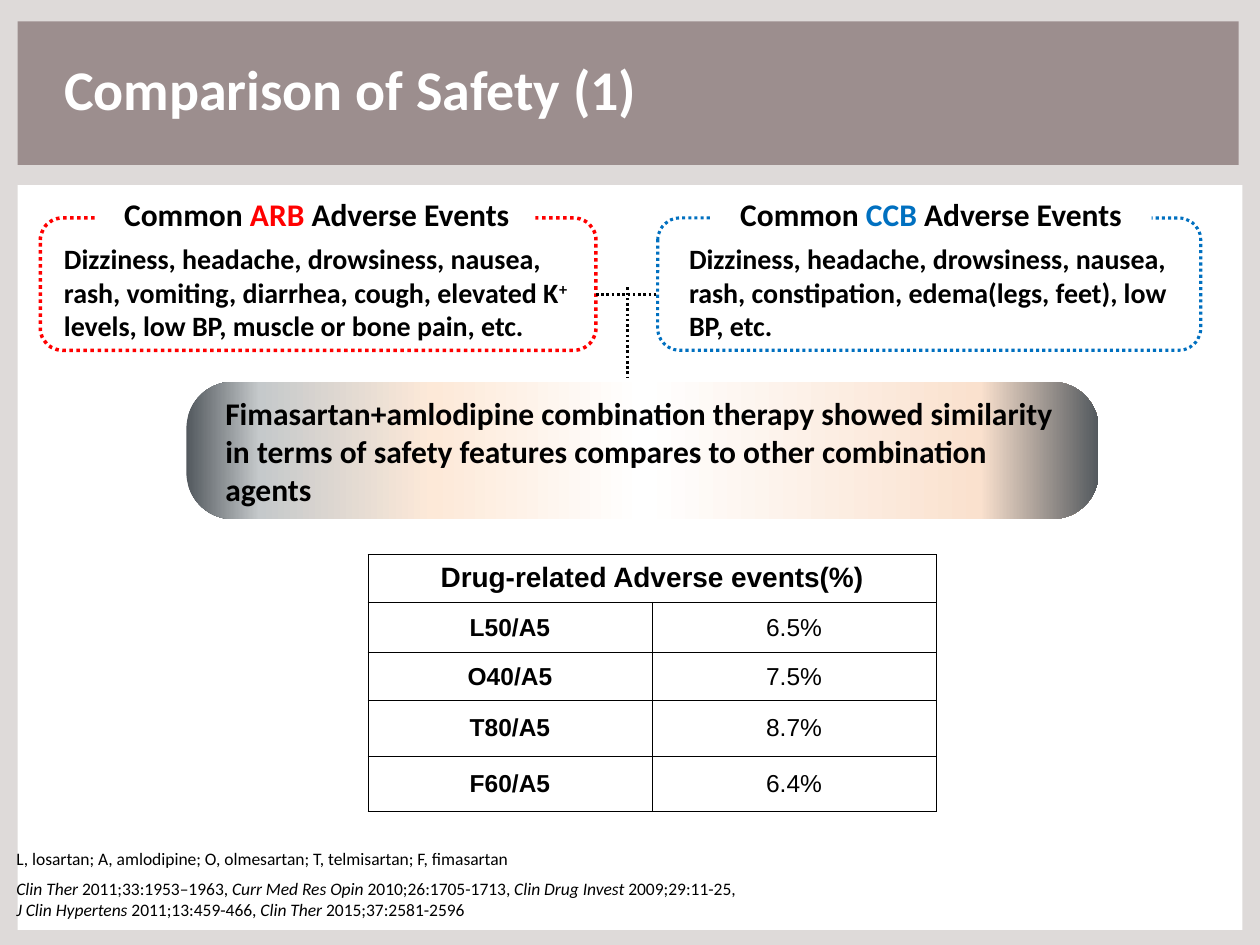
import pptx
import pptx.util
import pptx.dml.color
import pptx.enum.dml
import pptx.enum.shapes
import pptx.enum.text
import pptx.oxml
import pptx.oxml.ns
from lxml import etree

Inches, Pt = pptx.util.Inches, pptx.util.Pt
SHAPE = pptx.enum.shapes.MSO_SHAPE
ALIGN = pptx.enum.text.PP_ALIGN
ANCHOR = pptx.enum.text.MSO_ANCHOR
DOTS = pptx.enum.dml.MSO_LINE.ROUND_DOT
qn = pptx.oxml.ns.qn

BLACK, WHITE, RED, BLUE = "000000", "FFFFFF", "FF0000", "0070C0"
ITALIC = {"italic": True}


def color(hex_code):
    return pptx.dml.color.RGBColor.from_string(hex_code)


class Slide:
    font = {"name": "Calibri", "size": Pt(18), "bold": True}
    insets = {"margin_left": 0.1, "margin_top": 0.05,
              "margin_right": 0.1, "margin_bottom": 0.05}

    def __init__(self, prs, background):
        self.s = prs.slides.add_slide(prs.slide_layouts[6])
        fill = self.s.background.fill
        fill.solid()
        fill.fore_color.rgb = color(background)

    def add_runs(self, tf, paragraphs, align=ALIGN.LEFT, ink=BLACK, **style):
        """Fill a frame with paragraphs, each a list of (text, format values)."""
        for i, runs in enumerate(paragraphs):
            p = tf.paragraphs[0] if i == 0 else tf.add_paragraph()
            p.alignment = align
            for text, extra in runs:
                r = p.add_run()
                r.text = text
                values = {**self.font, "ink": ink, **style, **extra}
                r.font.color.rgb = color(values.pop("ink"))
                if values.pop("superscript", False):
                    r.font._element.set("baseline", "30000")
                for name, value in values.items():
                    setattr(r.font, name, value)

    def text(self, box, paragraphs, wrap=True, inset=True, **style):
        tf = self.s.shapes.add_textbox(*map(Inches, box)).text_frame
        tf.word_wrap = wrap
        for name, value in self.insets.items():
            setattr(tf, name, Inches(value if inset else 0))
        self.add_runs(tf, paragraphs, **style)

    def shape(self, kind, box, fill=None, line=None, width=1):
        sp = self.s.shapes.add_shape(kind, *map(Inches, box))
        sp.shadow.inherit = False
        if fill:
            sp.fill.solid()
            sp.fill.fore_color.rgb = color(fill)
        else:
            sp.fill.background()
        if line:
            self.dotted(sp.line, line, width)
        else:
            sp.line.fill.background()
        return sp

    def dotted(self, line, ink, width):
        line.color.rgb = color(ink)
        line.width = Pt(width)
        line.dash_style = DOTS

    def gradient(self, sp, stops):
        """Fill from left to right with (percent, colour) stops."""
        sp.fill.gradient()
        sp.fill.gradient_angle = 0
        gs_list = sp._element.spPr.find(".//" + qn("a:gsLst"))
        for old in list(gs_list):
            gs_list.remove(old)
        for percent, hex_code in stops:
            gs = etree.SubElement(gs_list, qn("a:gs"), pos=str(percent * 1000))
            etree.SubElement(gs, qn("a:srgbClr"), val=hex_code)

    def connector(self, x1, y1, x2, y2):
        line = self.s.shapes.add_connector(
            pptx.enum.shapes.MSO_CONNECTOR.STRAIGHT, *map(Inches, (x1, y1, x2, y2)))
        self.dotted(line.line, BLACK, 1.5)
        etree.SubElement(line._element.spPr, qn("a:effectLst"))

    def event_card(self, frame, title, body, drug, events, ink, width):
        """Dotted frame whose title covers part of the top edge."""
        self.shape(SHAPE.ROUNDED_RECTANGLE, frame, line=ink, width=width)
        tf = self.shape(SHAPE.RECTANGLE, title, fill=WHITE).text_frame
        tf.word_wrap = True
        self.add_runs(tf, [[("Common ", {}), (drug, {"ink": ink}),
                            (" Adverse Events", {})]], align=ALIGN.CENTER)
        self.text(body, [events], size=Pt(16))

    def cell_borders(self, cell):
        for side in "LRTB":
            ln = etree.SubElement(cell._tc.get_or_add_tcPr(), qn("a:ln" + side),
                                  w=str(Pt(0.5)))
            fill = etree.SubElement(ln, qn("a:solidFill"))
            etree.SubElement(fill, qn("a:srgbClr"), val=BLACK)

    def table(self, box, heights, heading, rows):
        table = self.s.shapes.add_table(len(rows) + 1, 2, *map(Inches, box)).table
        table.first_row = table.horz_banding = False
        for row, height in zip(table.rows, heights):
            row.height = Inches(height)
        for cell in table.iter_cells():
            self.cell_borders(cell)
            cell.fill.background()
            cell.vertical_anchor = ANCHOR.MIDDLE
        table.cell(0, 0).merge(table.cell(0, 1))
        cell_style = {"align": ALIGN.CENTER, "name": "Arial"}
        self.add_runs(table.cell(0, 0).text_frame, [[(heading, {})]],
                      size=Pt(16), **cell_style)
        for i, values in enumerate(rows, 1):
            for j, value in enumerate(values):
                self.add_runs(table.cell(i, j).text_frame, [[(value, {})]],
                              size=Pt(14), bold=j == 0, **cell_style)


def main():
    prs = pptx.Presentation()
    prs.slide_width, prs.slide_height = Inches(10), Inches(7.5)
    slide = Slide(prs, "DEDAD9")

    slide.shape(SHAPE.RECTANGLE, (0.14, 0.17, 9.69, 1.14), fill="9C8E8E")
    slide.shape(SHAPE.RECTANGLE, (0.14, 1.47, 9.72, 5.91), fill=WHITE)
    slide.text((0.41, 0.38, 4.79, 0.64), [[("Comparison of Safety (1)", {})]],
               wrap=False, size=Pt(32), ink=WHITE)

    slide.event_card(
        (0.32, 1.73, 4.41, 1.05), (0.78, 1.5, 3.47, 0.4), (0.41, 1.87, 4.24, 0.91),
        "ARB",
        [("Dizziness, headache, drowsiness, nausea, rash, vomiting, diarrhea, "
          "cough, elevated K", {}),
         ("+", {"superscript": True}),
         (" levels, low BP, muscle or bone pain, etc.", {})],
        RED, 2)
    slide.event_card(
        (5.22, 1.73, 4.31, 1.05), (5.64, 1.5, 3.5, 0.4), (5.37, 1.87, 4.12, 0.91),
        "CCB",
        [("Dizziness, headache, drowsiness, nausea, rash, constipation, "
          "edema(legs, feet), low BP, etc.", {})],
        BLUE, 1.75)
    slide.connector(4.73, 2.34, 5.22, 2.34)
    slide.connector(4.98, 2.28, 4.98, 2.99)

    banner = slide.shape(SHAPE.ROUNDED_RECTANGLE, (1.48, 3.03, 7.24, 1.09))
    banner.adjustments[0] = 0.34
    slide.gradient(banner, [(0, "53595E"), (8, "C5C9CB"), (27, "FDE9D8"),
                            (50, WHITE), (87, "FAE1CE"), (100, "53595E")])
    slide.text((1.69, 3.08, 6.93, 1.01), [[
        ("Fimasartan+amlodipine combination therapy showed similarity in terms of "
         "safety features compares to other combination agents", {})]])

    slide.table((2.92, 4.4, 4.51, 2.03), (0.38, 0.4, 0.38, 0.44, 0.44),
                "Drug-related Adverse events(%)",
                [("L50/A5", "6.5%"), ("O40/A5", "7.5%"),
                 ("T80/A5", "8.7%"), ("F60/A5", "6.4%")])

    note = {"inset": False, "size": Pt(10), "bold": False}
    slide.text((0.13, 6.73, 8.59, 0.17), [[
        ("L, losartan; A, amlodipine; O, olmesartan; T, telmisartan; "
         "F, fimasartan", {})]], **note)
    slide.text((0.13, 6.97, 8.59, 0.34), [
        [("Clin Ther ", ITALIC), ("2011;33:1953–1963, ", {}),
         ("Curr Med Res Opin ", ITALIC), ("2010;26:1705-1713, ", {}),
         ("Clin Drug Invest ", ITALIC), ("2009;29:11-25,", {})],
        [("J Clin Hypertens ", ITALIC), ("2011;13:459-466, ", {}),
         ("Clin Ther ", ITALIC), ("2015;37:2581-2596", {})]], **note)

    prs.save("out.pptx")


if __name__ == "__main__":
    main()
